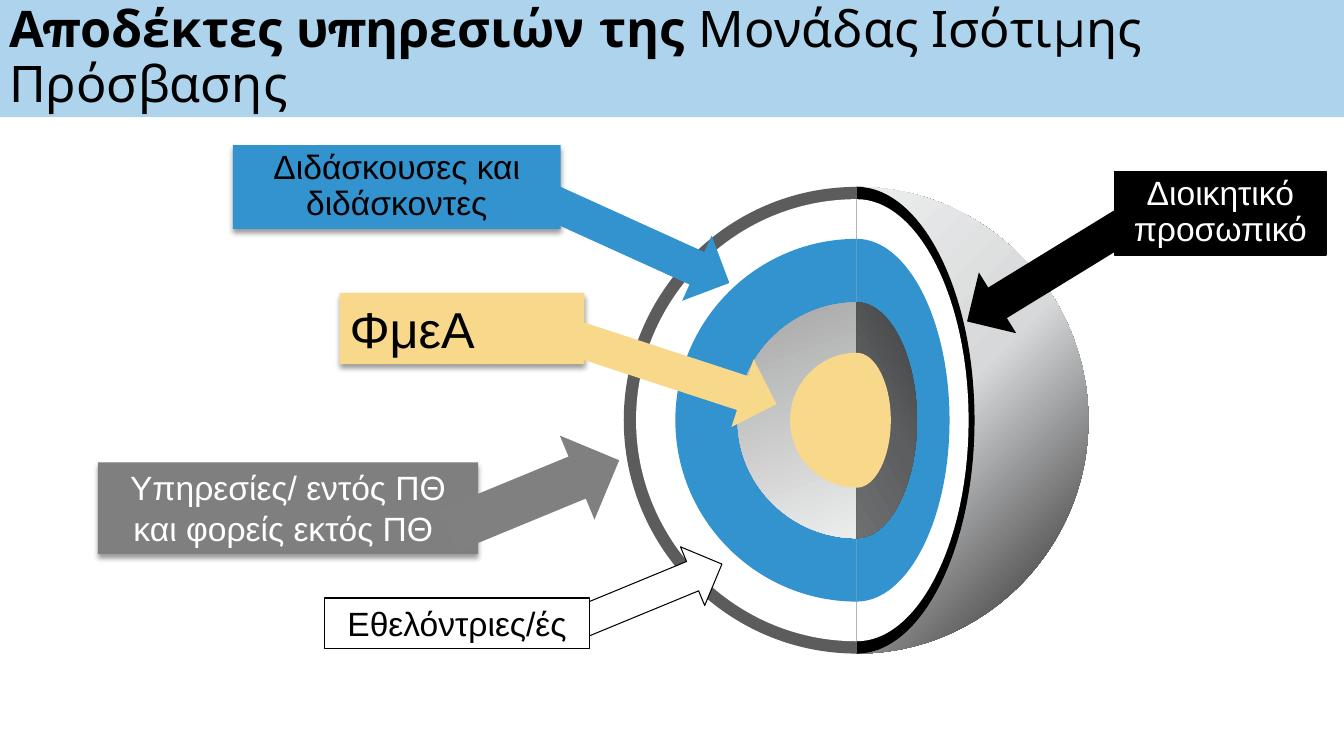
import pptx
import pptx.util
import pptx.oxml
import pptx.oxml.ns
from pptx.dml.color import RGBColor
from pptx.enum.shapes import MSO_SHAPE
from pptx.enum.text import MSO_ANCHOR, PP_ALIGN

Cm, Pt, qn = pptx.util.Cm, pptx.util.Pt, pptx.oxml.ns.qn
BLACK, WHITE, BLUE, YELLOW, GREY = "000000", "FFFFFF", "3293CF", "F8D98C", "7F7F7F"
SHELL = [(2, "EBECEC"), (44, "D7D8D9"), (92, "3A3A3A")]
INNER_LEFT = [(0, "A6A6A6"), (100, "EBECEC")]
INNER_RIGHT = [(0, "404243"), (50, "5C5E60"), (100, "6D6F71")]

TITLE = [[("Αποδέκτες υπηρεσιών της ", True), ("Μονάδας Ισότιμης", False)],
         [("Πρόσβασης", False)]]

# text, box in cm, fill, text colour, size, alignment, line spacing
SHADED_LABELS = [
    ("Υπηρεσίες/ εντός ΠΘ και φορείς εκτός ΠΘ ", (2.47, 11.65, 9.58, 2.31),
     GREY, WHITE, 24, PP_ALIGN.CENTER, 1.0),
    ("Διδάσκουσες και διδάσκοντες", (5.87, 3.66, 8.26, 2.11),
     BLUE, BLACK, 24, PP_ALIGN.CENTER, 0.9),
    ("ΦμεΑ", (8.56, 7.38, 6.17, 1.8), YELLOW, BLACK, 36, PP_ALIGN.LEFT, 1.0),
]
OUTLINED_LABELS = [
    ("Διοικητικό προσωπικό", (28.09, 4.32, 5.33, 2.11),
     BLACK, WHITE, 24, PP_ALIGN.CENTER, 0.9),
    ("Εθελόντριες/ές", (8.18, 15.07, 6.68, 1.27),
     WHITE, BLACK, 24, PP_ALIGN.CENTER, 1.0),
]
# box in cm, rotation, fill, outline width
ARROWS = [
    ((14.39, 8.46, 5.31, 1.8), 18.1, YELLOW, 0),
    ((13.7, 5.22, 4.9, 1.8), 24.4, BLUE, 0),
    ((14.48, 14.15, 3.86, 1.6), 337.6, WHITE, 0.75),
    ((24.01, 5.92, 4.9, 1.8), 148.5, BLACK, 0),
    ((11.13, 11.34, 4.65, 2.29), 337.6, "808080", 0),
]
# Horizontal bulge of the two sides (negative is left), vertical radius,
# fill colour or gradient stops, gradient angle (None is radial)
CENTRE = (21.59, 10.59)
LAYERS = [
    (5.84, 2.97, 5.88, SHELL, None),
    (0, -5.87, 5.88, "5C5C5C", None),
    (0, -5.56, 5.57, WHITE, None),
    (0, -4.57, 4.57, BLUE, None),
    (0, -3.0, 2.97, INNER_LEFT, 70),
    (2.97, 0, 5.88, BLACK, None),
    (2.82, 0, 5.57, WHITE, None),
    (2.34, 0, 4.57, BLUE, None),
    (1.52, 0, 2.97, INNER_RIGHT, 150),
    (0.86, -1.68, 1.7, YELLOW, None),
]
ARC = 0.55  # Bezier handle length of a quarter ellipse
NS = pptx.oxml.ns.nsdecls("a")


def paint(fmt, colour):
    fmt.solid()
    fmt.fore_color.rgb = RGBColor.from_string(colour)


def style(sp, fill, line=0):
    sp.shadow.inherit = False
    paint(sp.fill, fill)
    if line:
        paint(sp.line.fill, BLACK)
        sp.line.width = Pt(line)
    else:
        sp.line.fill.background()


def add_gradient(sp, stops, angle):
    gs = "".join(f'<a:gs pos="{pos * 1000}"><a:srgbClr val="{c}"/></a:gs>'
                 for pos, c in stops)
    if angle is None:
        way = '<a:path path="circle"><a:fillToRect r="100000" b="100000"/></a:path>'
    else:
        way = f'<a:lin ang="{angle * 60000}" scaled="0"/>'
    grad = pptx.oxml.parse_xml(
        f'<a:gradFill {NS} rotWithShape="1"><a:gsLst>{gs}</a:gsLst>{way}</a:gradFill>')
    solid = sp._element.spPr.find(qn("a:solidFill"))
    solid.getparent().replace(solid, grad)


def add_drop_shadow(sp):
    effects = sp._element.spPr.find(qn("a:effectLst"))
    effects.append(pptx.oxml.parse_xml(
        f'<a:outerShdw {NS} blurRad="{Pt(4)}" dist="{Pt(3)}" dir="5400000" '
        'rotWithShape="0"><a:srgbClr val="000000"><a:alpha val="40000"/>'
        '</a:srgbClr></a:outerShdw>'))


def format_run(r, font, size, colour, bold=False):
    r.font.name, r.font.size, r.font.bold = font, Pt(size), bold
    r.font.color.rgb = RGBColor.from_string(colour)


def curve_segments(sp):
    """Turn every three straight segments into one Bezier curve."""
    lines = list(sp._element.iter(qn("a:lnTo")))
    for i in range(0, len(lines), 3):
        curve = pptx.oxml.parse_xml(f"<a:cubicBezTo {NS}/>")
        lines[i].addprevious(curve)
        for line in lines[i:i + 3]:
            curve.append(line[0])
            line.getparent().remove(line)


def add_layer(shapes, down, up, ry, fill, angle):
    """Draw an outline from the top down one side and back up the other."""
    half = [(0, -1), (ARC, -1), (1, -ARC), (1, 0), (1, ARC), (ARC, 1), (0, 1)]
    unit = ([(down * x, y) for x, y in half]
            + [(up * x, y) for x, y in half[-2::-1]])
    points = [(Cm(CENTRE[0] + x), Cm(CENTRE[1] + ry * y)) for x, y in unit]
    builder = shapes.build_freeform(*points[0])
    builder.add_line_segments(points[1:], close=True)
    sp = builder.convert_to_shape()
    curve_segments(sp)
    if isinstance(fill, str):
        style(sp, fill)
    else:
        style(sp, fill[0][1])
        add_gradient(sp, fill, angle)


def add_label(shapes, text, box, fill, colour, size, align, spacing, line=0):
    sp = shapes.add_shape(MSO_SHAPE.RECTANGLE, *map(Cm, box))
    style(sp, fill, line)
    tf = sp.text_frame
    tf.text = text
    tf.word_wrap = True
    tf.vertical_anchor = MSO_ANCHOR.TOP
    p = tf.paragraphs[0]
    p.alignment, p.line_spacing = align, spacing
    format_run(p.runs[0], "Arial", size, colour)
    return sp


def add_title(title):
    title.left, title.top, title.width, title.height = map(Cm, (0, 0, 33.87, 2.95))
    paint(title.fill, "ADD4EC")
    tf = title.text_frame
    tf.word_wrap = False
    tf.margin_left = Cm(0.23)
    tf.vertical_anchor = MSO_ANCHOR.MIDDLE
    for i, runs in enumerate(TITLE):
        p = tf.add_paragraph() if i else tf.paragraphs[0]
        p.alignment, p.line_spacing, p.space_before = PP_ALIGN.LEFT, 0.9, Pt(0)
        for text, bold in runs:
            r = p.add_run()
            r.text = text
            format_run(r, "Montserrat", 36, BLACK, bold)


def main():
    prs = pptx.Presentation()
    prs.slide_width, prs.slide_height = Cm(33.87), Cm(19.05)
    shapes = prs.slides.add_slide(prs.slide_layouts[5]).shapes
    add_title(shapes.title)
    for layer in LAYERS:
        add_layer(shapes, *layer)
    for label in SHADED_LABELS:
        add_drop_shadow(add_label(shapes, *label))
    for box, rotation, fill, line in ARROWS:
        sp = shapes.add_shape(MSO_SHAPE.RIGHT_ARROW, *map(Cm, box))
        sp.rotation = rotation
        style(sp, fill, line)
    for label in OUTLINED_LABELS:
        add_label(shapes, *label, line=1)
    prs.save("out.pptx")


if __name__ == "__main__":
    main()
